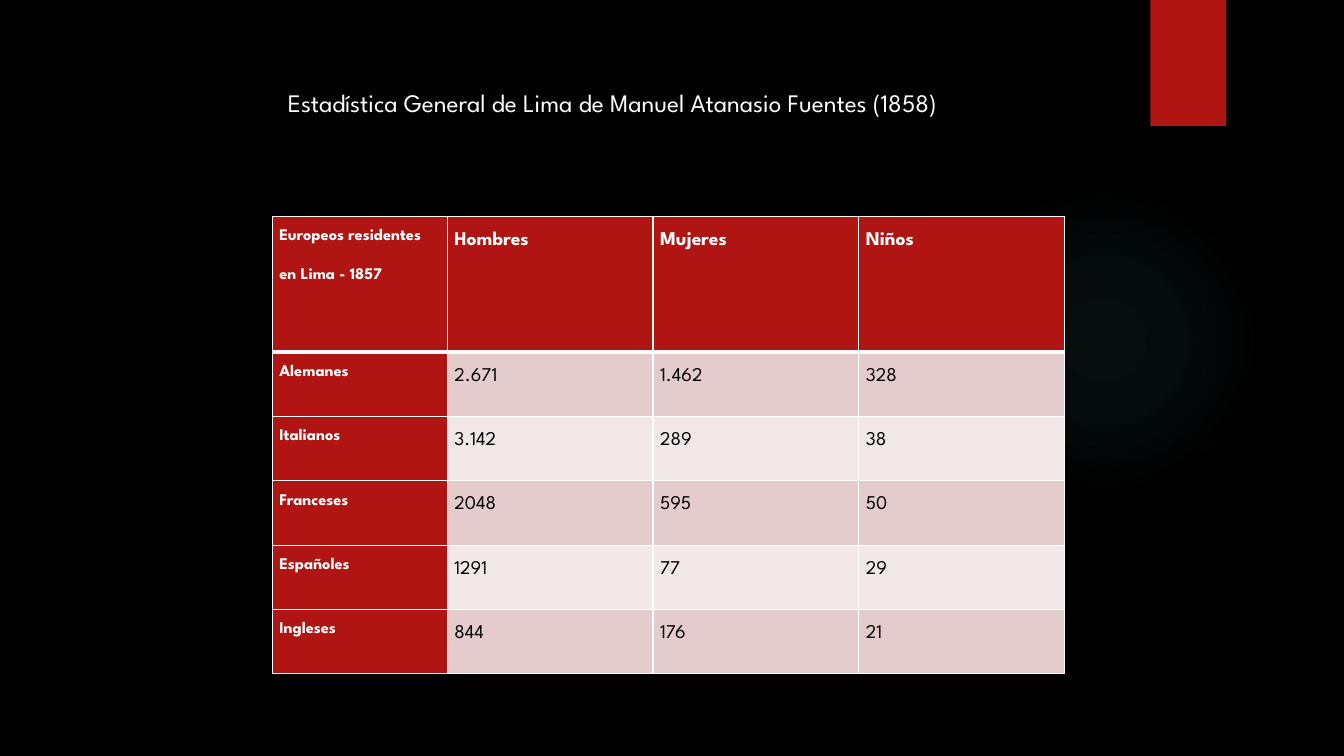
from lxml import etree
from pptx import Presentation
from pptx.dml.color import RGBColor
from pptx.enum.shapes import MSO_SHAPE
from pptx.oxml import parse_xml
from pptx.oxml.ns import nsdecls, qn
from pptx.util import Pt

OVAL, RECTANGLE = MSO_SHAPE.OVAL, MSO_SHAPE.RECTANGLE
FONT = "League Spartan"
RED, WHITE, BLACK = "B01513", "FFFFFF", "000000"
BANDS = ["E4CCCC", "F2E8E7"]
COLUMN_WIDTHS = [125, 147, 147, 147]
HEADER_HEIGHT, ROW_HEIGHT = 97, 46
ROWS = [
    ["Europeos residentes en Lima - 1857", "Hombres", "Mujeres", "Niños"],
    ["Alemanes", "2.671", "1.462", "328"],
    ["Italianos", "3.142", "289", "38"],
    ["Franceses", "2048", "595", "50"],
    ["Españoles", "1291", "77", "29"],
    ["Ingleses", "844", "176", "21"],
]


def rgb(hex_color):
    return RGBColor.from_string(hex_color)


def write(frame, text, size, color=WHITE, bold=False, raised=False):
    """Fill the frame with one paragraph; raised gives spaced superscript."""
    frame.word_wrap = True
    paragraph = frame.paragraphs[0]
    run = paragraph.add_run()
    run.text = text
    run.font.name = FONT
    run.font.size = Pt(size)
    run.font.bold = bold
    run.font.color.rgb = rgb(color)
    if raised:
        paragraph.line_spacing = 1.5
        paragraph.space_after = Pt(8)
        run._r.get_or_add_rPr().set("baseline", "30000")


prs = Presentation()
prs.slide_width, prs.slide_height = Pt(960), Pt(540)
slide = prs.slides.add_slide(prs.slide_layouts[6])
slide.background.fill.solid()
slide.background.fill.fore_color.rgb = rgb(BLACK)

# Soft teal glow behind the table
glow = slide.shapes.add_shape(OVAL, Pt(677.5), Pt(131.75), Pt(222), Pt(222))
glow.shadow.inherit = False
glow.line.fill.background()
glow.fill.background()
stops = "".join(
    f'<a:gs pos="{position * 1000}"><a:srgbClr val="50B9C1">'
    f'<a:alpha val="{alpha * 1000}"/></a:srgbClr></a:gs>'
    for position, alpha in [(0, 7), (36, 6), (69, 0), (100, 0)]
)
no_fill = glow._element.spPr.find(qn("a:noFill"))
no_fill.getparent().replace(no_fill, parse_xml(
    f'<a:gradFill {nsdecls("a")}><a:gsLst>{stops}</a:gsLst><a:path path="circle">'
    '<a:fillToRect l="50000" t="50000" r="50000" b="50000"/></a:path></a:gradFill>'
))

ribbon = slide.shapes.add_shape(RECTANGLE, Pt(821.75), Pt(0), Pt(54), Pt(90))
ribbon.shadow.inherit = False
ribbon.line.fill.background()
ribbon.fill.solid()
ribbon.fill.fore_color.rgb = rgb(RED)

# Census table
table_height = HEADER_HEIGHT + ROW_HEIGHT * (len(ROWS) - 1)
census = slide.shapes.add_table(
    len(ROWS), len(COLUMN_WIDTHS), Pt(194.5), Pt(154.5),
    Pt(sum(COLUMN_WIDTHS)), Pt(table_height),
).table
for column, width in zip(census.columns, COLUMN_WIDTHS):
    column.width = Pt(width)

for r, values in enumerate(ROWS):
    census.rows[r].height = Pt(ROW_HEIGHT if r else HEADER_HEIGHT)
    for c, value in enumerate(values):
        cell = census.cell(r, c)
        cell.margin_left = cell.margin_right = Pt(5)
        cell.margin_top = cell.margin_bottom = Pt(0)
        is_heading = r == 0 or c == 0
        write(cell.text_frame, value, 24 if c else 20,
              WHITE if is_heading else BLACK, bold=is_heading, raised=True)

        cell_format = cell._tc.get_or_add_tcPr()
        for side in "LRTB":
            under_header = (r, side) in [(0, "B"), (1, "T")]
            border = etree.SubElement(cell_format, qn(f"a:ln{side}"),
                                      w=str(Pt(3 if under_header else 1)))
            border_fill = etree.SubElement(border, qn("a:solidFill"))
            etree.SubElement(border_fill, qn("a:srgbClr"), val=WHITE)
        cell.fill.solid()
        cell.fill.fore_color.rgb = rgb(RED if is_heading else BANDS[(r - 1) % 2])

title = slide.shapes.add_textbox(Pt(198.5), Pt(59), Pt(566), Pt(51))
write(title.text_frame, "Estadística General de Lima de Manuel Atanasio Fuentes (1858)", 18)

prs.save("out.pptx")
